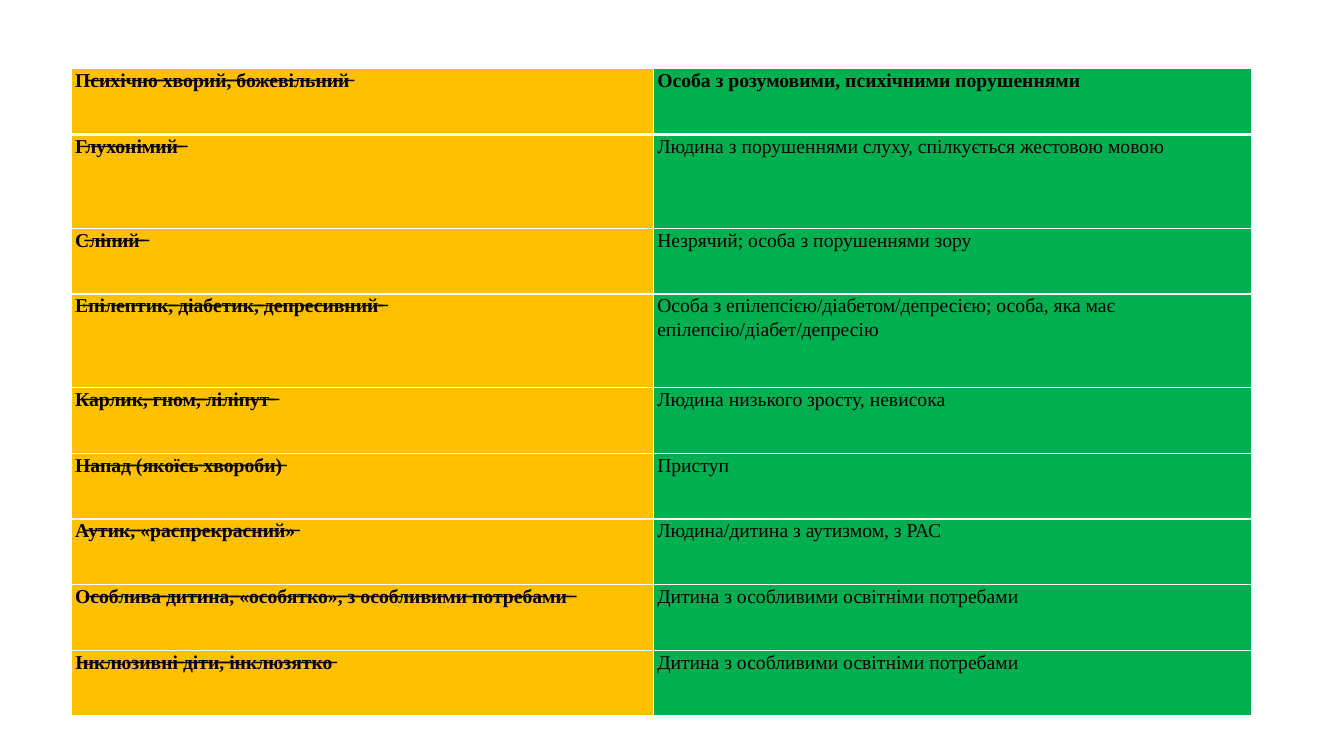
from lxml import etree
from pptx import Presentation
from pptx.dml.color import RGBColor
from pptx.oxml.ns import qn
from pptx.util import Pt

FONT = "Times New Roman"
BLACK, WHITE = "000000", "FFFFFF"
AMBER, GREEN = "FFC000", "00B050"
STRIKE = "̶"  # combining stroke placed after each struck letter

COLUMN_WIDTHS = (415.8, 427.4)
SHORT_ROW, TALL_ROW = 46.85, 67.1

# Term to avoid, term to use, row height
TERMS = [
    ("Психічно хворий, божевільний",
     "Особа з розумовими, психічними порушеннями", SHORT_ROW),
    ("Глухонімий ",
     "Людина з порушеннями слуху, спілкується жестовою мовою", TALL_ROW),
    ("Сліпий ", "Незрячий; особа з порушеннями зору", SHORT_ROW),
    ("Епілептик, діабетик, депресивний ",
     "Особа з епілепсією/діабетом/депресією; особа, яка має "
     "епілепсію/діабет/депресію", TALL_ROW),
    ("Карлик, гном, ліліпут ", "Людина низького зросту, невисока", SHORT_ROW),
    ("Напад (якоїсь хвороби)", "Приступ", SHORT_ROW),
    ("Аутик, «распрекрасний»", "Людина/дитина з аутизмом, з РАС", SHORT_ROW),
    ("Особлива дитина, «особятко», з особливими потребами ",
     "Дитина з особливими освітніми потребами", SHORT_ROW),
    ("Інклюзивні діти, інклюзятко",
     "Дитина з особливими освітніми потребами", SHORT_ROW),
]


def color(hex_string):
    return RGBColor.from_string(hex_string)


def struck(term):
    return "".join(letter + STRIKE for letter in term)


def set_borders(cell, top, bottom):
    properties = cell._tc.get_or_add_tcPr()
    for side, width in (("L", 1), ("R", 1), ("T", top), ("B", bottom)):
        line = etree.SubElement(properties, qn(f"a:ln{side}"), w=str(Pt(width)))
        fill = etree.SubElement(line, qn("a:solidFill"))
        etree.SubElement(fill, qn("a:srgbClr"), val=WHITE)


def fill_cell(cell, text, background, bold):
    cell.fill.solid()
    cell.fill.fore_color.rgb = color(background)
    cell.margin_left = cell.margin_right = Pt(2.9)
    cell.margin_top = cell.margin_bottom = 0
    cell.text_frame.text = text
    paragraph = cell.text_frame.paragraphs[0]
    paragraph.line_spacing = 1.07
    paragraph.space_after = Pt(8)
    font = paragraph.runs[0].font
    font.name, font.size, font.bold = FONT, Pt(14), bold
    font.color.rgb = color(BLACK)


def add_terms_table(slide, left, top):
    width = sum(COLUMN_WIDTHS)
    height = sum(row_height for _, _, row_height in TERMS)
    table = slide.shapes.add_table(len(TERMS), len(COLUMN_WIDTHS), Pt(left),
                                   Pt(top), Pt(width), Pt(height)).table
    table.horz_banding = False
    for column, column_width in zip(table.columns, COLUMN_WIDTHS):
        column.width = Pt(column_width)

    for index, (avoid, use, row_height) in enumerate(TERMS):
        row = table.rows[index]
        row.height = Pt(row_height)
        # The first row is set off by a thicker rule
        for cell in row.cells:
            set_borders(cell, top=3 if index == 1 else 1,
                        bottom=3 if index == 0 else 1)
        fill_cell(row.cells[0], struck(avoid), AMBER, bold=True)
        fill_cell(row.cells[1], use, GREEN, bold=index == 0)


def main():
    presentation = Presentation()
    presentation.slide_width, presentation.slide_height = Pt(960), Pt(540)
    slide = presentation.slides.add_slide(presentation.slide_layouts[6])
    add_terms_table(slide, left=50.8, top=49.2)
    presentation.save("out.pptx")


if __name__ == "__main__":
    main()
